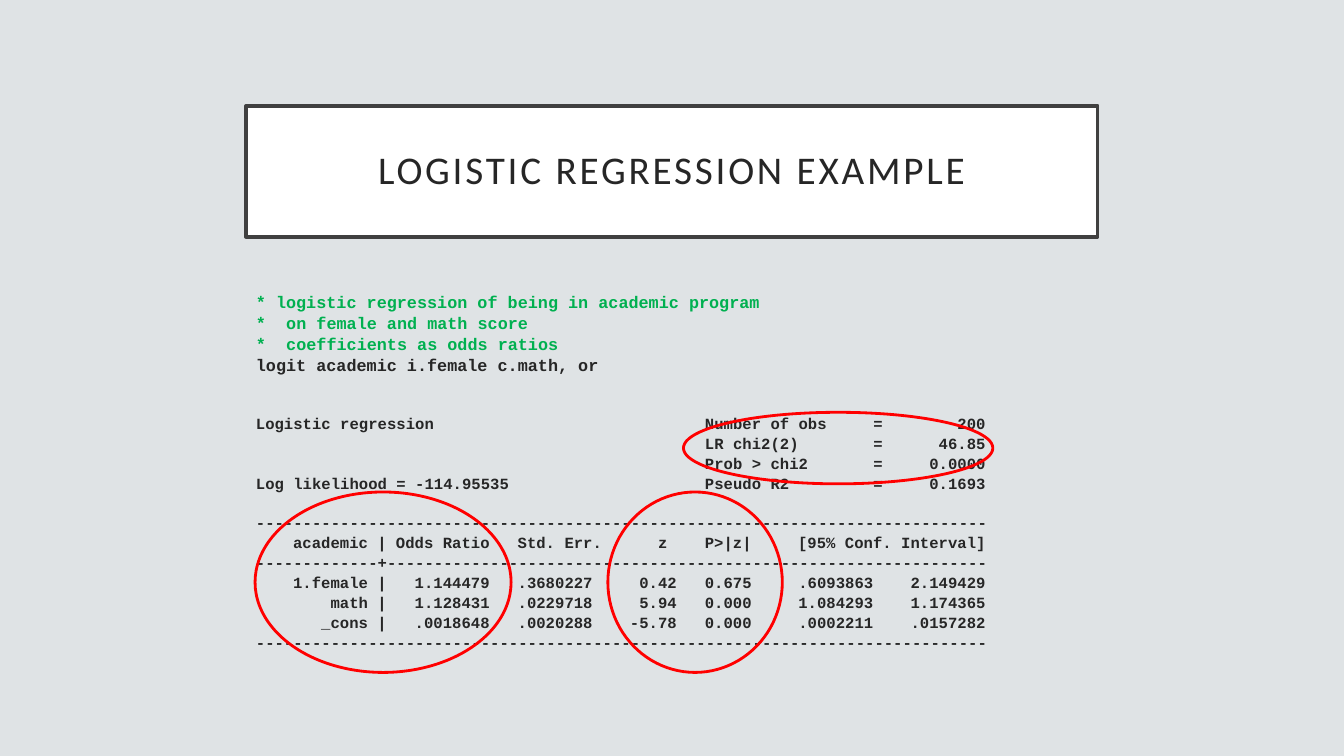
from dataclasses import dataclass

from lxml import etree
from pptx import Presentation
from pptx import util as u
from pptx.dml.color import RGBColor
from pptx.enum import shapes, text
from pptx.oxml.ns import qn


@dataclass
class Theme:
    back: str = "DFE3E5"
    white: str = "FFFFFF"
    edge: str = "404040"
    ink: str = "262626"
    note: str = "00B050"
    ring: str = "FF0000"
    sans: str = "Calibri"
    mono: str = "Courier New"
    head: float = 28
    code: float = 12
    out: float = 11.1


class Deck:
    def __init__(self, theme):
        self.theme = theme
        self.prs = Presentation()
        self.prs.slide_width, self.prs.slide_height = u.Pt(960), u.Pt(540)
        self.slide = self.prs.slides.add_slide(self.prs.slide_layouts[6])
        fill = self.slide.background.fill
        fill.solid()
        fill.fore_color.rgb = RGBColor.from_string(theme.back)

    def shape(self, kind, box, line, width, fill=None):
        item = self.slide.shapes.add_shape(kind, *map(u.Pt, box))
        item.shadow.inherit = False
        if fill:
            item.fill.solid()
            item.fill.fore_color.rgb = RGBColor.from_string(fill)
        else:
            item.fill.background()
        item.line.color.rgb = RGBColor.from_string(line)
        item.line.width = u.Pt(width)
        return item

    def style(self, para, face, size, color, bold=False):
        for run in para.runs:
            run.font.name, run.font.size = face, u.Pt(size)
            run.font.bold = bold
            run.font.color.rgb = RGBColor.from_string(color)

    def title(self, words, box):
        t = self.theme
        item = self.shape(shapes.MSO_SHAPE.RECTANGLE, box, t.edge, 2.5, t.white)
        frame = item.text_frame
        frame.text = words
        frame.word_wrap = True
        frame.vertical_anchor = text.MSO_ANCHOR.MIDDLE
        para = frame.paragraphs[0]
        para.alignment = text.PP_ALIGN.CENTER
        para.line_spacing = 0.9
        self.style(para, t.sans, t.head, t.ink)
        para.runs[0].font._element.set("spc", "200")

    def ring(self, box):
        self.shape(shapes.MSO_SHAPE.OVAL, box, self.theme.ring, 2)

    def listing(self, rows, box):
        """Each row is (words, size, colour, tab stops, blank lines above)."""
        frame = self.slide.shapes.add_textbox(*map(u.Pt, box)).text_frame
        frame.word_wrap = True
        for i, (words, size, color, stops, skip) in enumerate(rows):
            para = frame.add_paragraph() if i else frame.paragraphs[0]
            para.text = words
            para.line_spacing = 0.8
            para.space_before = u.Pt(round(GAP + skip * PITCH, 2))
            self.style(para, self.theme.mono, size, color, True)
            self.tabs(para, stops, size)

    def tabs(self, para, stops, size):
        """Set tab stops, given as (character column, side)."""
        if not stops:
            return
        props = para._p.get_or_add_pPr()
        tabs = etree.SubElement(props, qn("a:tabLst"))
        for col, side in stops:
            etree.SubElement(tabs, qn("a:tab"), pos=str(u.Pt(col * size * 0.602)), algn=side)


GAP, PITCH = 3.57, 13.64
WIDE = 78
RULE = "-" * WIDE
NOTE = [(3, "l")]
STAT = [(48, "l"), (66, "l"), (WIDE, "r")]
HEAD = [(col, "r") for col in (14, 25, 37, 44, 53, WIDE)]
DATA = [(col, "r") for col in (14, 25, 36, 45, 53, 66, WIDE)]

CODE = [
    ("* logistic regression of being in academic program", "note"),
    ("*\ton female and math score", "note"),
    ("*\tcoefficients as odds ratios", "note"),
    ("logit academic i.female c.math, or", "ink"),
]
OUTPUT = [
    ("Logistic regression\tNumber of obs\t=\t200", STAT, 2),
    ("\tLR chi2(2)\t=\t46.85", STAT, 0),
    ("\tProb > chi2\t=\t0.0000", STAT, 0),
    ("Log likelihood = -114.95535\tPseudo R2\t=\t0.1693", STAT, 0),
    (RULE, [], 1),
    ("\tacademic |\tOdds Ratio\tStd. Err.\tz\tP>|z|\t[95% Conf. Interval]", HEAD, 0),
    ("-" * 13 + "+" + "-" * 64, [], 0),
    ("\t1.female |\t1.144479\t.3680227\t0.42\t0.675\t.6093863\t2.149429", DATA, 0),
    ("\tmath |\t1.128431\t.0229718\t5.94\t0.000\t1.084293\t1.174365", DATA, 0),
    ("\t_cons |\t.0018648\t.0020288\t-5.78\t0.000\t.0002211\t.0157282", DATA, 0),
    (RULE, [], 0),
]
RINGS = [
    (182.2, 351.4, 182.9, 128.9),
    (434.2, 351.4, 124.6, 128.9),
    (488.2, 294.5, 221, 51.1),
]


def main():
    theme = Theme()
    deck = Deck(theme)
    deck.title("LOGISTIC REGRESSION EXAMPLE", (175.7, 75.6, 608.4, 93.6))
    rows = [(words, theme.code, getattr(theme, tone), NOTE, 0) for words, tone in CODE]
    rows += [(words, theme.out, theme.ink, stops, skip) for words, stops, skip in OUTPUT]
    deck.listing(rows, (175.7, 207.4, 608.4, 260.6))
    for box in RINGS:
        deck.ring(box)
    deck.prs.save("out.pptx")


if __name__ == "__main__":
    main()
